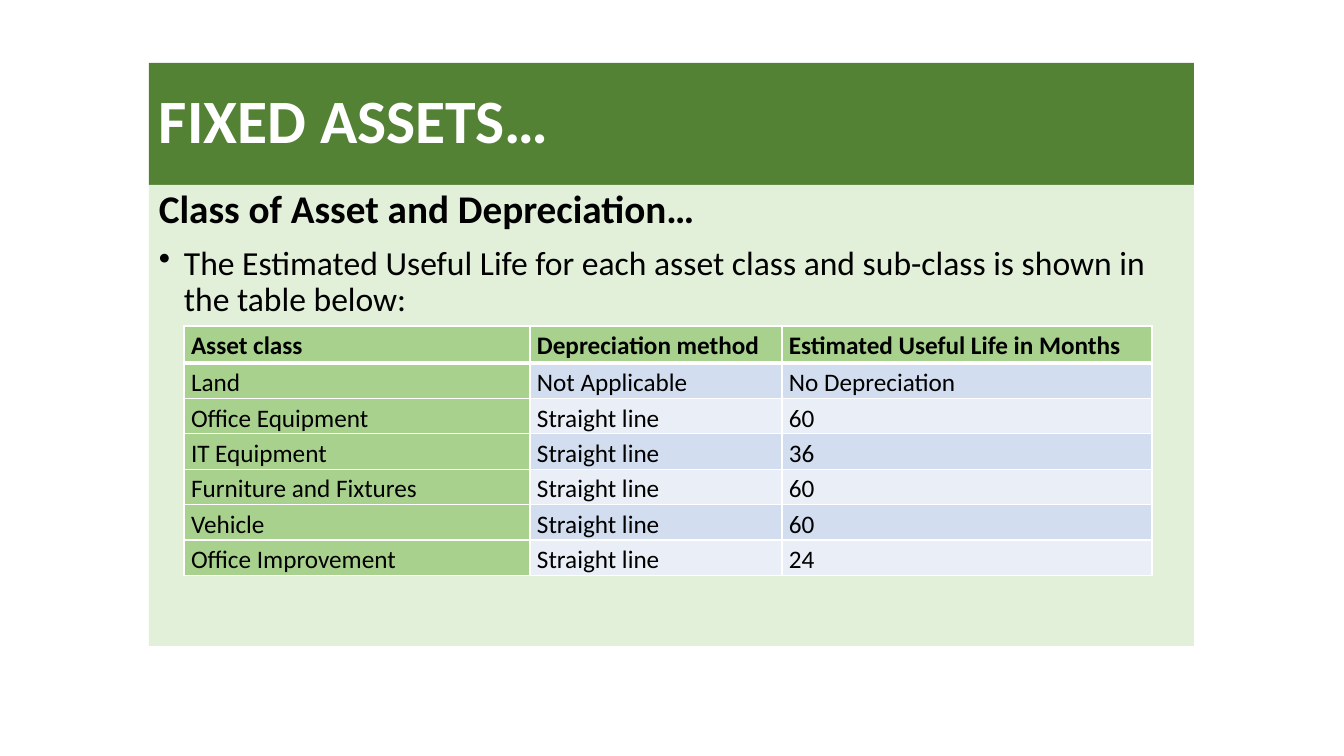
from dataclasses import dataclass

import pptx
import pptx.dml.color
import pptx.enum.shapes
import pptx.enum.text
import pptx.oxml
import pptx.oxml.ns
import pptx.util
from lxml import etree

EMU_PER_PX = 914400 / 100.8


@dataclass(frozen=True)
class Theme:
    font: str = "Calibri"
    white: str = "FFFFFF"
    black: str = "000000"
    banner: str = "548235"
    panel: str = "E2F0D9"
    label: str = "A9D18E"
    bands: tuple = ("D2DEEF", "EAEFF7")
    title_pt: int = 44
    heading_pt: int = 28
    body_pt: int = 24
    table_pt: int = 18


def px(n):
    return pptx.util.Emu(round(n * EMU_PER_PX))


def rgb(value):
    return pptx.dml.color.RGBColor.from_string(value)


class Deck:
    def __init__(self, theme, width, height):
        self.theme = theme
        self.prs = pptx.Presentation()
        self.prs.slide_width, self.prs.slide_height = px(width), px(height)
        self.s = self.prs.slides.add_slide(self.prs.slide_layouts[6])

    def paint(self, target, color):
        target.fill.solid()
        target.fill.fore_color.rgb = rgb(color)

    def panel(self, x, y, w, h, color, anchor):
        sp = self.s.shapes.add_shape(
            pptx.enum.shapes.MSO_SHAPE.RECTANGLE, px(x), px(y), px(w), px(h))
        sp.shadow.inherit = False
        self.paint(sp, color)
        sp.line.fill.background()
        tf = sp.text_frame
        tf.word_wrap = True
        tf.vertical_anchor = anchor
        return tf

    def text(self, p, text, size, color, bold=False, spacing=0.9, before=0):
        p.text = text
        p.alignment = pptx.enum.text.PP_ALIGN.LEFT
        p.line_spacing = spacing
        p.space_before = pptx.util.Pt(before)
        p.font.name = self.theme.font
        p.font.size = pptx.util.Pt(size)
        p.font.bold = bold
        p.font.color.rgb = rgb(color)

    def bullet(self, p, indent):
        pPr = p._p.get_or_add_pPr()
        pPr.set("marL", str(px(indent)))
        pPr.set("indent", str(-px(indent)))
        bullet = pptx.oxml.parse_xml(
            f'<a:buChar {pptx.oxml.ns.nsdecls("a")} char="•"/>')
        # Bullets precede the default run properties
        pPr.find(pptx.oxml.ns.qn("a:defRPr")).addprevious(bullet)

    def borders(self, cell, bottom):
        tcPr = cell._tc.get_or_add_tcPr()
        for i, (side, width) in enumerate(
                (("L", 1), ("R", 1), ("T", 1), ("B", bottom))):
            ln = etree.Element(pptx.oxml.ns.qn(f"a:ln{side}"),
                               w=str(pptx.util.Pt(width)))
            fill = etree.SubElement(ln, pptx.oxml.ns.qn("a:solidFill"))
            etree.SubElement(fill, pptx.oxml.ns.qn("a:srgbClr"),
                             val=self.theme.white)
            tcPr.insert(i, ln)

    def table(self, x, y, widths, header_h, row_h, rows):
        t = self.theme
        height = header_h + row_h * (len(rows) - 1)
        table = self.s.shapes.add_table(
            len(rows), len(widths), px(x), px(y),
            px(sum(widths)), px(height)).table
        for column, width in zip(table.columns, widths):
            column.width = px(width)
        for i, values in enumerate(rows):
            header = i == 0
            table.rows[i].height = px(header_h if header else row_h)
            for j, value in enumerate(values):
                cell = table.cell(i, j)
                cell.margin_left = cell.margin_right = px(7)
                cell.margin_top = cell.margin_bottom = 0
                self.text(cell.text_frame.paragraphs[0], value, t.table_pt,
                          t.black, bold=header, spacing=1.15)
                self.paint(cell, t.label if header or j == 0
                           else t.bands[(i - 1) % 2])
                # The rule below the header and above the first row is thick
                self.borders(cell, bottom=3 if header else 1)
                if i == 1:
                    top = cell._tc.tcPr.find(pptx.oxml.ns.qn("a:lnT"))
                    top.set("w", str(pptx.util.Pt(3)))


ASSETS = [
    ("Asset class", "Depreciation method", "Estimated Useful Life in Months"),
    ("Land", "Not Applicable", "No Depreciation"),
    ("Office Equipment", "Straight line", "60"),
    ("IT Equipment", "Straight line", "36"),
    ("Furniture and Fixtures", "Straight line", "60"),
    ("Vehicle", "Straight line", "60"),
    ("Office Improvement", "Straight line", "24"),
]


def main():
    theme = Theme()
    deck = Deck(theme, 1344, 756)
    anchor = pptx.enum.text.MSO_ANCHOR

    # Title banner
    tf = deck.panel(149, 63, 1045, 122, theme.banner, anchor.MIDDLE)
    deck.text(tf.paragraphs[0], "FIXED ASSETS…", theme.title_pt,
              theme.white, bold=True)

    # Body panel
    tf = deck.panel(149, 185, 1045, 461, theme.panel, anchor.TOP)
    deck.text(tf.paragraphs[0], "Class of Asset and Depreciation…",
              theme.heading_pt, theme.black, bold=True, before=10)
    p = tf.add_paragraph()
    deck.text(p, "The Estimated Useful Life for each asset class and "
              "sub-class is shown in the table below:",
              theme.body_pt, theme.black, before=10)
    deck.bullet(p, 25)

    # Depreciation table
    deck.table(184, 326, (346, 252, 370), 37, 35, ASSETS)

    deck.prs.save("out.pptx")


if __name__ == "__main__":
    main()
